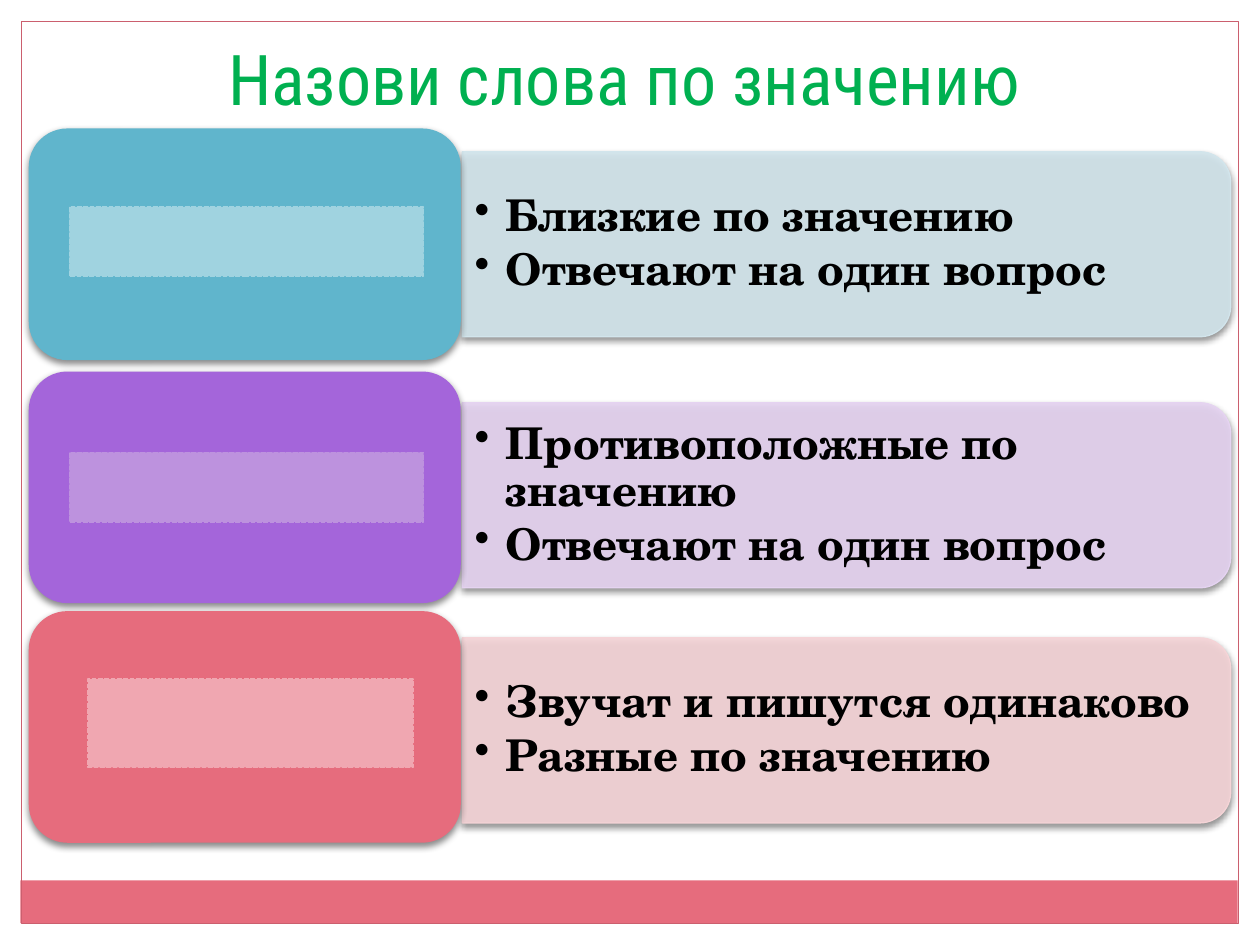
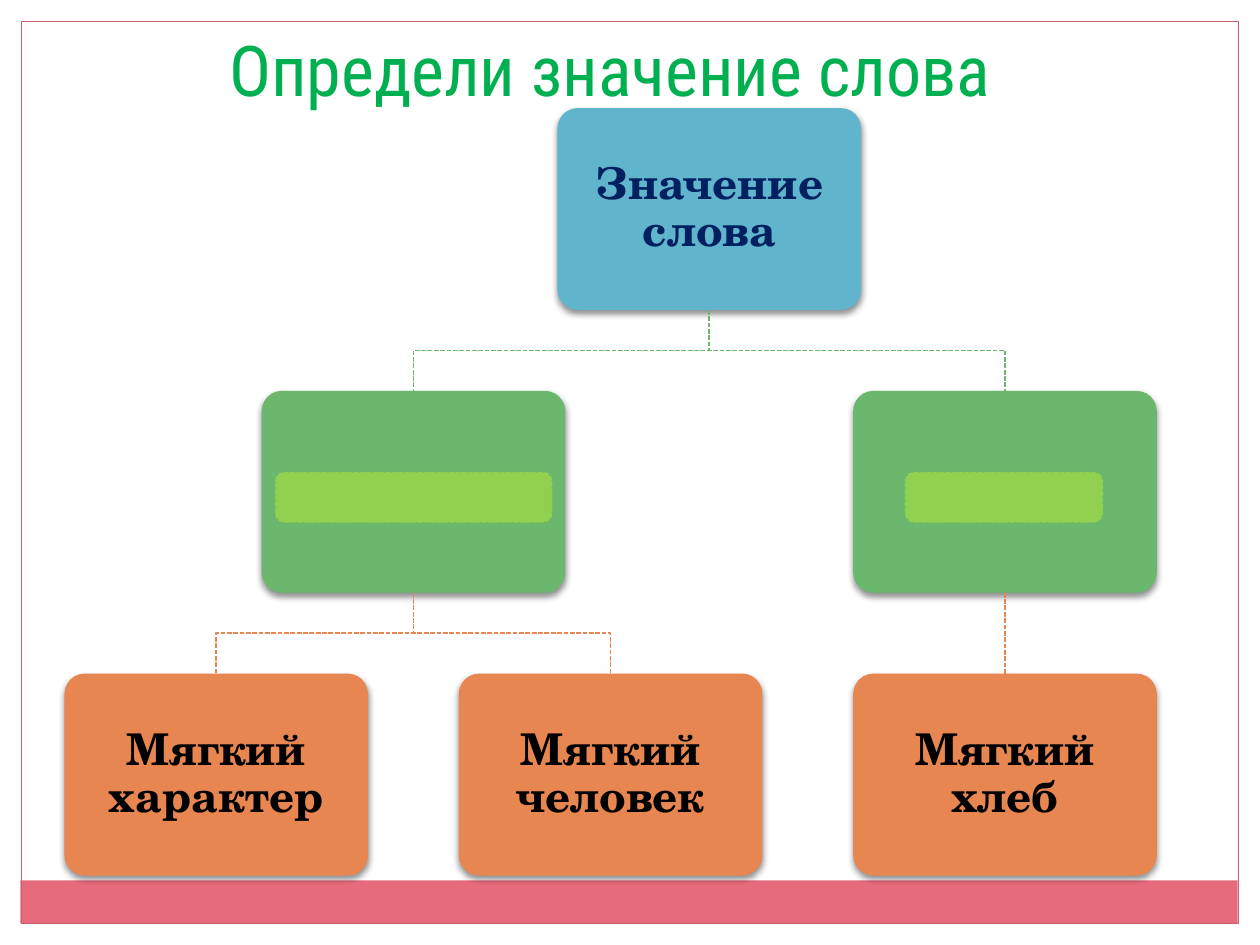
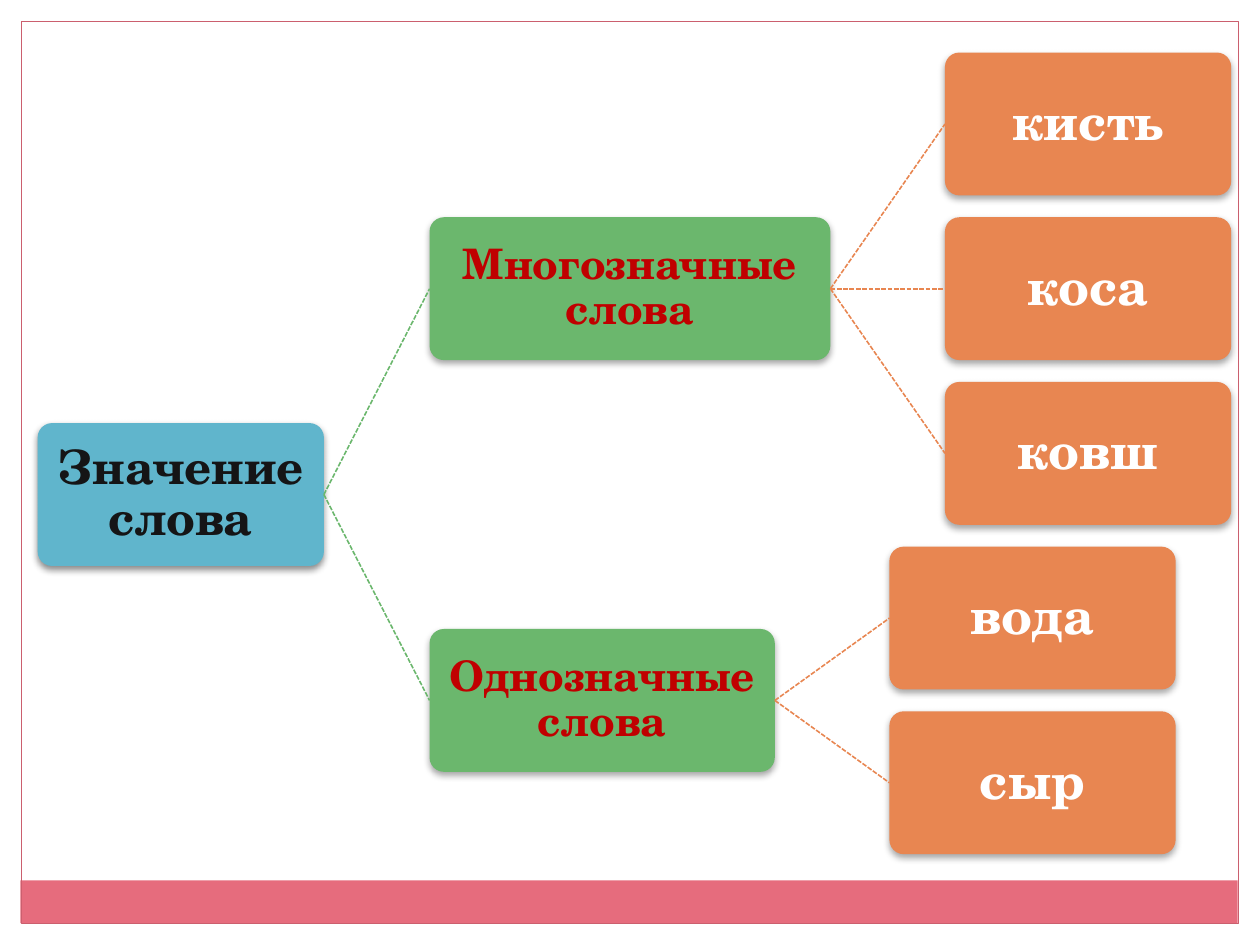
"""Builds three slides about the meanings of words."""
from lxml import etree
from pptx import Presentation
from pptx.dml.color import RGBColor
from pptx.enum.dml import MSO_LINE
from pptx.enum.shapes import MSO_CONNECTOR, MSO_SHAPE
from pptx.enum.text import MSO_ANCHOR, PP_ALIGN
from pptx.oxml.ns import qn
from pptx.util import Cm, Pt

RECT = MSO_SHAPE.RECTANGLE
ROUND = MSO_SHAPE.ROUNDED_RECTANGLE
HALF_ROUND = MSO_SHAPE.ROUND_2_SAME_RECTANGLE
STRAIGHT = MSO_CONNECTOR.STRAIGHT
DASHED = MSO_LINE.SQUARE_DOT
CENTER, LEFT = PP_ALIGN.CENTER, PP_ALIGN.LEFT
MIDDLE, TOP = MSO_ANCHOR.MIDDLE, MSO_ANCHOR.TOP
TOP_SIDE, LEFT_SIDE, BOTTOM_SIDE, RIGHT_SIDE = range(4)

COLORS = {
    "rose": "E66C7D", "frame": "CB5F6E", "title": "00B050",
    "blue": "60B5CC", "violet": "A465DA", "green": "6BB76D", "orange": "E88651",
    "pale blue": "D2E5EC", "pale violet": "E5D3F1", "pale rose": "F5D4D7",
    "blue mask": "A0D3E0", "violet mask": "BD92DE", "rose mask": "F0A7B1",
    "lime": "92D050", "navy": "002060", "red": "C00000",
    "ink": "151516", "black": "000000", "white": "FFFFFF",
}
HEAD_FONT, BODY_FONT = "Roboto Condensed", "TeX Gyre Schola"


class Lesson:
    """Holds the deck, its style and the current slide."""

    def __init__(self):
        self.deck = Presentation()
        self.deck.slide_width, self.deck.slide_height = Cm(25.4), Cm(19.05)
        self.page = None

    def color(self, name):
        return RGBColor.from_string(COLORS[name])

    def new_page(self):
        self.page = self.deck.slides.add_slide(self.deck.slide_layouts[6])
        self.shape(RECT, 0.41, 17.75, 24.54, 0.86, fill="rose")
        self.shape(RECT, 0.43, 0.43, 24.54, 18.19, line="frame")

    def shape(self, kind, left, top, width, height, fill=None, line=None, weight=0.75):
        shape = self.page.shapes.add_shape(kind, Cm(left), Cm(top), Cm(width), Cm(height))
        shape.shadow.inherit = False
        if fill:
            shape.fill.solid()
            shape.fill.fore_color.rgb = self.color(fill)
        else:
            shape.fill.background()
        if line:
            self.stroke(shape, line, weight)
        else:
            shape.line.fill.background()
        return shape

    def stroke(self, shape, color, weight):
        shape.line.color.rgb = self.color(color)
        shape.line.width = Pt(weight)

    def dash(self, shape, color):
        self.stroke(shape, color, 0.9)
        shape.line.dash_style = DASHED

    def alpha(self, color, percent):
        etree.SubElement(color, qn("a:alpha"), val=str(percent * 1000))

    def cast_shadow(self, shape, percent):
        effects = shape._element.spPr.find(qn("a:effectLst"))
        shadow = etree.SubElement(effects, qn("a:outerShdw"), blurRad=str(Pt(4)),
                                  dist=str(Pt(2)), dir="5400000", rotWithShape="0")
        self.alpha(etree.SubElement(shadow, qn("a:srgbClr"), val=COLORS["black"]), percent)

    def fill_text(self, box, lines, size, color, font=BODY_FONT, bold=True, align=CENTER,
                  anchor=MIDDLE, margins=(0.25, 0.13), spacing=0.9, bullets=False):
        frame = box.text_frame
        frame.word_wrap = True
        frame.vertical_anchor = anchor
        frame.margin_left = frame.margin_right = Cm(margins[0])
        frame.margin_top = frame.margin_bottom = Cm(margins[1])
        for index, line in enumerate(lines):
            para = frame.add_paragraph() if index else frame.paragraphs[0]
            para.text = line
            para.alignment = align
            para.line_spacing = spacing
            if bullets:
                para.space_after = Pt(3.75)
                properties = para._p.get_or_add_pPr()
                properties.set("marL", str(Cm(0.63)))
                properties.set("indent", str(Cm(-0.63)))
                etree.SubElement(properties, qn("a:buChar"), char="•")
            para.font.name, para.font.size, para.font.bold = font, Pt(size), bold
            para.font.color.rgb = self.color(color)

    def text_box(self, left, top, width, height, lines, size, color, **style):
        box = self.page.shapes.add_textbox(Cm(left), Cm(top), Cm(width), Cm(height))
        self.fill_text(box, lines, size, color, **style)

    def title(self, text, top, width):
        self.text_box(0.58, top, width, 1.96, [text], 40, "title", font=HEAD_FONT,
                      bold=False, anchor=TOP, spacing=1.0)

    def mask(self, kind, left, top, width, height, color):
        self.dash(self.shape(kind, left, top, width, height, fill=color), color)

    def panel(self, top, color, lines):
        left, width, height = 9.32, 15.49, 3.73
        offset = (width - height) / 2
        panel = self.shape(HALF_ROUND, left + offset, top - offset, height, width,
                           fill=color, line=color)
        panel.rotation = 90
        self.alpha(panel._element.spPr.find(qn("a:solidFill"))[0], 90)
        self.cast_shadow(panel, 45)
        self.text_box(left, top + 0.18, 15.32, 3.38, lines, 25, "black",
                      align=LEFT, bullets=True)

    def card(self, top, color):
        self.cast_shadow(self.shape(ROUND, 0.58, top, 8.71, 4.67, fill=color), 45)

    def node(self, left, top, width, height, fill, text="", size=25, color="black",
             margin=0.25, shadow=45):
        node = self.shape(ROUND, left, top, width, height, fill=fill)
        node.adjustments[0] = 0.1
        self.cast_shadow(node, shadow)
        if text:
            self.fill_text(node, [text], size, color, margins=(margin, margin))
        return node

    def link(self, parent, child, color, sides=(RIGHT_SIDE, LEFT_SIDE)):
        link = self.page.shapes.add_connector(STRAIGHT, 0, 0, 0, 0)
        link.begin_connect(parent, sides[0])
        link.end_connect(child, sides[1])
        self.dash(link, color)
        etree.SubElement(link._element.spPr, qn("a:effectLst"))

    def elbow(self, parent, child, color):
        start_x = parent.left + parent.width // 2
        end_x = child.left + child.width // 2
        start_y = parent.top + parent.height
        middle_y = (start_y + child.top) // 2
        builder = self.page.shapes.build_freeform(start_x, start_y)
        builder.add_line_segments(
            [(start_x, middle_y), (end_x, middle_y), (end_x, child.top)], close=False)
        elbow = builder.convert_to_shape()
        elbow.shadow.inherit = False
        elbow.fill.background()
        self.dash(elbow, color)


def word_groups(lesson):
    """Three cards with the features of each word group."""
    lesson.new_page()
    same_question = "Отвечают на один вопрос"
    groups = [
        (2.59, "blue", 3.06, "pale blue", ["Близкие по значению", same_question]),
        (7.49, "violet", 8.12, "pale violet", ["Противоположные по значению", same_question]),
        (12.32, "rose", 12.86, "pale rose",
         ["Звучат и пишутся одинаково", "Разные по значению"]),
    ]
    for card_top, color, panel_top, pale, features in groups:
        lesson.panel(panel_top, pale, features)
        lesson.card(card_top, color)
    lesson.mask(RECT, 1.4, 4.17, 7.14, 1.4, "blue mask")
    lesson.mask(RECT, 1.4, 9.12, 7.14, 1.4, "violet mask")
    lesson.mask(RECT, 1.78, 13.69, 6.55, 1.78, "rose mask")
    lesson.title("Назови слова по значению", 0.58, 24)


def meaning_tree(lesson):
    """A tree from the top down."""
    lesson.new_page()

    def place(column, row, fill, text="", color="black"):
        return lesson.node(1.3 + 7.95 * column, 2.18 + 5.7 * row, 6.12, 4.07,
                           fill, text, color=color)

    root = place(1.25, 0, "blue", "Значение слова", "navy")
    many, single = [place(column, 1, "green") for column in (0.5, 2)]
    words = ["Мягкий характер", "Мягкий человек", "Мягкий хлеб"]
    leaves = [place(column, 2, "orange", word) for column, word in enumerate(words)]
    for branch in (many, single):
        lesson.elbow(root, branch, "green")
    for leaf in leaves[:2]:
        lesson.elbow(many, leaf, "orange")
    lesson.link(single, leaves[2], "orange", (BOTTOM_SIDE, TOP_SIDE))
    lesson.mask(ROUND, 5.56, 9.53, 5.56, 0.99, "lime")
    lesson.mask(ROUND, 18.26, 9.53, 3.96, 0.99, "lime")
    lesson.title("Определи значение слова", 0.41, 23.42)


def word_tree(lesson):
    """A tree from left to right."""
    lesson.new_page()

    def place(left, row, width, *content, shadow=35):
        return lesson.node(left, 1.06 + 3.32 * row, width, 2.88, *content,
                           margin=0.05, shadow=shadow)

    branch_left, gap, leaf_width = 8.66, 2.31, 5.77
    root = place(0.76, 2.25, leaf_width, "blue", "Значение слова", 27, "ink", shadow=45)
    branches = [
        ("Многозначные слова", 1, 8.08, 0, ["кисть", "коса", "ковш"]),
        ("Однозначные слова", 3.5, 6.96, 3, ["вода", "сыр"]),
    ]
    for text, row, width, first_row, words in branches:
        branch = place(branch_left, row, width, "green", text, 24, "red")
        lesson.link(root, branch, "green")
        for leaf_row, word in enumerate(words, first_row):
            leaf = place(branch_left + width + gap, leaf_row, leaf_width,
                         "orange", word, 29, "white")
            lesson.link(branch, leaf, "orange")


def main():
    """Build and save the deck."""
    lesson = Lesson()
    word_groups(lesson)
    meaning_tree(lesson)
    word_tree(lesson)
    lesson.deck.save("out.pptx")


if __name__ == "__main__":
    main()
